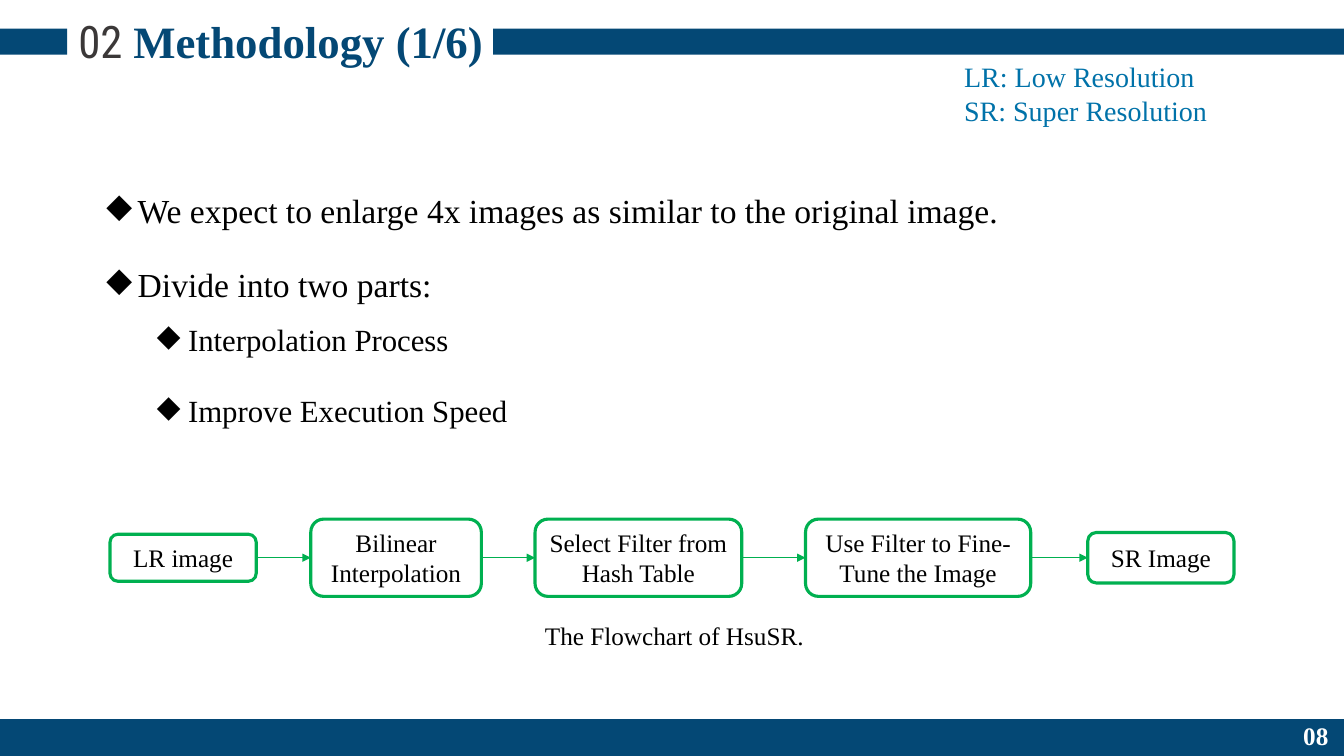
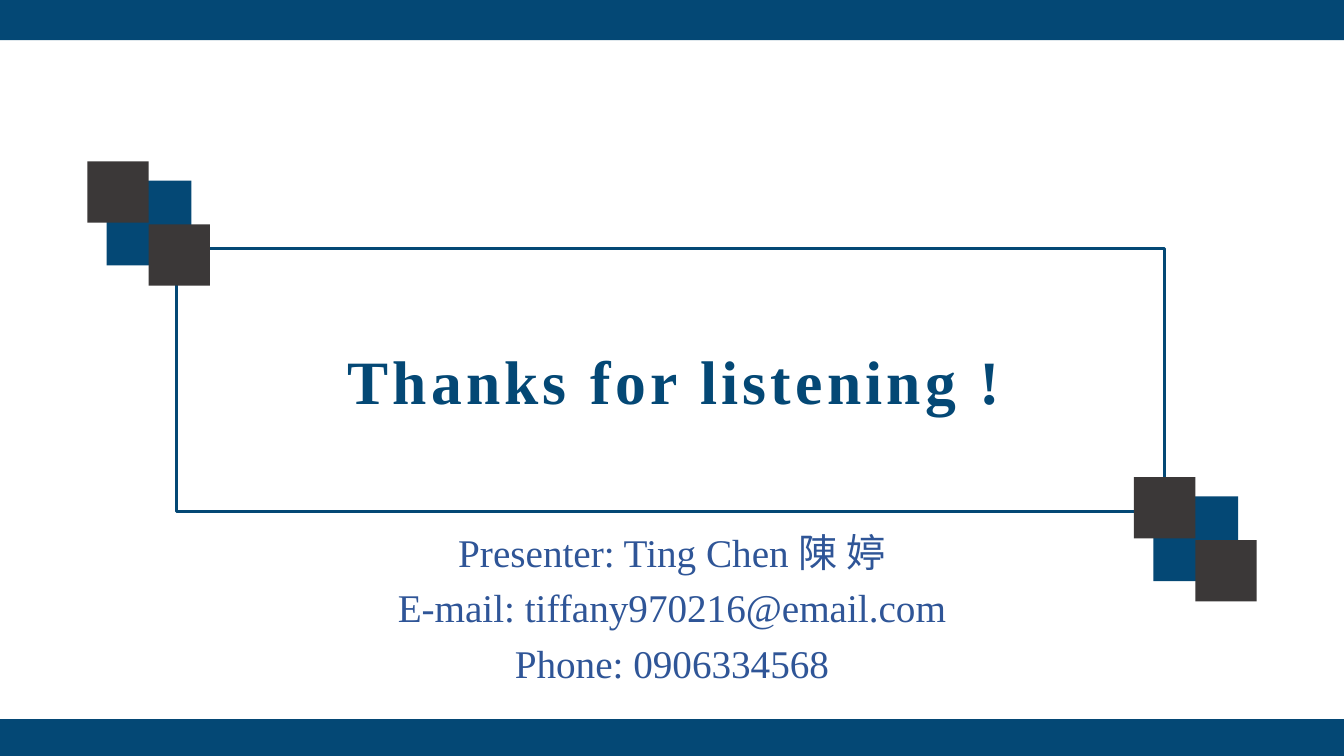
from itertools import pairwise

from lxml.etree import SubElement
from pptx import Presentation
from pptx.dml.color import RGBColor
from pptx.enum.shapes import MSO_CONNECTOR as Connector, MSO_SHAPE as Shape
from pptx.enum.text import MSO_ANCHOR as Anchor, PP_ALIGN as Align
from pptx.oxml.ns import qn
from pptx.util import Inches, Pt

COLUMNS, ROWS = 160, 90
CELL = Inches(1) / 12
SERIF = "Times New Roman"
COLORS = {
    "navy": "044875",
    "charcoal": "3B3838",
    "sky": "0072A9",
    "contact": "2F5597",
    "green": "00B050",
    "black": "000000",
    "white": "FFFFFF",
}
FOOTER_TOP = 85.6


def color(name):
    return RGBColor.from_string(COLORS[name])


def grid(*cells):
    """Turn columns and rows into slide lengths."""
    return [round(cell * CELL) for cell in cells]


def set_all(target, values):
    for name, value in values.items():
        setattr(target, name, value)


def write(para, text, size, ink="black", face=SERIF, bold=False, spacing=None):
    span = para.add_run()
    span.text = text
    set_all(span.font, {"size": Pt(size), "name": face, "bold": bold})
    span.font.color.rgb = color(ink)
    if spacing:
        span.font._element.set("spc", str(spacing * 100))


def fill_frame(frame, lines, size, layout=None, **style):
    frame.word_wrap = True
    for number, line in enumerate(lines):
        para = frame.add_paragraph() if number else frame.paragraphs[0]
        set_all(para, layout or {})
        if number == 0:
            para.space_before = Pt(0)
        write(para, line, size, **style)


def add_text(page, place, lines, size, layout=None, anchor=Anchor.TOP, **style):
    frame = page.shapes.add_textbox(*grid(*place)).text_frame
    frame.vertical_anchor = anchor
    fill_frame(frame, lines, size, layout, **style)


def add_box(page, place, fill=None, line=None, width=1, kind=Shape.RECTANGLE):
    box = page.shapes.add_shape(kind, *grid(*place))
    box.shadow.inherit = False
    if fill:
        box.fill.solid()
        box.fill.fore_color.rgb = color(fill)
    else:
        box.fill.background()
    if line:
        box.line.color.rgb = color(line)
        box.line.width = Pt(width)
    else:
        box.line.fill.background()
    return box


def add_arrow(page, start, end, row):
    x1, y, x2 = grid(start, row, end)
    arrow = page.shapes.add_connector(Connector.STRAIGHT, x1, y, x2, y)
    arrow.line.color.rgb = color("green")
    arrow.line.width = Pt(0.5)
    SubElement(arrow.line._get_or_add_ln(), qn("a:tailEnd"), type="triangle")
    SubElement(arrow._element.spPr, qn("a:effectLst"))


def add_bullet(para, indent):
    properties = para._p.get_or_add_pPr()
    properties.set("marL", str(Inches(indent)))
    properties.set("indent", str(-Inches(0.31)))
    tint = SubElement(properties, qn("a:buClr"))
    SubElement(tint, qn("a:srgbClr"), val=COLORS["black"])
    SubElement(properties, qn("a:buChar"), char="◆")


def add_list(page, place, items):
    """Items are (level, text, points after)."""
    levels = {1: (0.81, 24), 2: (1.31, 22)}
    frame = page.shapes.add_textbox(*grid(*place)).text_frame
    frame.word_wrap = True
    for number, (level, text, after) in enumerate(items):
        para = frame.add_paragraph() if number else frame.paragraphs[0]
        indent, size = levels[level]
        add_bullet(para, indent)
        set_all(para, {"alignment": Align.JUSTIFY, "space_after": Pt(after)})
        write(para, text, size)


def add_flow(page, center, steps):
    """Steps are (text, left, width, height), joined by arrows."""
    for text, left, width, height in steps:
        box = add_box(page, (left, center - height / 2, width, height),
                      "white", "green", 2.25, Shape.ROUNDED_RECTANGLE)
        fill_frame(box.text_frame, [text], 18, {"alignment": Align.CENTER})
    for (_, left, width, _), (_, following, _, _) in pairwise(steps):
        add_arrow(page, left + width, following, center)


def add_footer(page, number=None):
    add_box(page, (0, FOOTER_TOP, COLUMNS, ROWS - FOOTER_TOP), "navy")
    if number:
        add_text(page, (153.3, 85.2, 6.7, 4.8), [number], 18,
                 {"alignment": Align.CENTER}, Anchor.MIDDLE,
                 ink="white", bold=True)


def add_header(page, section, title):
    """A band broken by the section number and the title."""
    for left, right in ((0, 8), (58.7, COLUMNS)):
        add_box(page, (left, 3.4, right - left, 3.1), "navy")
    centered = {"alignment": Align.CENTER}
    add_text(page, (10.1, 1.1, 53.2, 7.7), [title], 32, centered,
             ink="navy", bold=True)
    add_text(page, (7.2, 1.1, 9.5, 7.7), [section], 32, centered,
             ink="charcoal", face="Roboto Condensed")


def add_corner(page, left, top):
    """A navy square with a dark square on two opposite corners."""
    for across, down, side, fill in ((2.3, 2.3, 10.1, "navy"),
                                     (0, 0, 7.3, "charcoal"),
                                     (7.3, 7.5, 7.3, "charcoal")):
        add_box(page, (left + across, top + down, side, side), fill)


def build_methodology(page):
    add_header(page, "02", "Methodology (1/6)")
    add_footer(page, "08")
    add_list(page, (5.5, 22, 147.8, 29.9), [
        (1, "We expect to enlarge 4x images as similar to the original image.", 24),
        (1, "Divide into two parts:", 12),
        (2, "Interpolation Process", 24),
        (2, "Improve Execution Speed", 24),
    ])
    add_text(page, (113.6, 6.5, 46.3, 9.2),
             ["LR: Low Resolution", "SR: Super Resolution"], 20, ink="sky")
    add_flow(page, 66.4, [
        ("LR image", 13.1, 17.4, 5.6),
        ("Bilinear Interpolation", 37, 20.3, 9.2),
        ("Select Filter from Hash Table", 63.7, 24.6, 9.2),
        ("Use Filter to Fine-Tune the Image", 95.9, 26.8, 9.2),
        ("SR Image", 129.5, 17.4, 6),
    ])
    add_text(page, (63.7, 73.2, 33.5, 4.8), ["The Flowchart of HsuSR."], 18)


def build_closing(page):
    centered = {"alignment": Align.CENTER}
    add_text(page, (21.5, 40.2, 117.6, 10.1), ["Thanks for listening !"], 44,
             centered, ink="navy", bold=True, spacing=3)
    add_text(page, (21.2, 62.3, 117.6, 20.2),
             ["Presenter: Ting Chen 陳 婷",
              "E-mail: tiffany970216@email.com",
              "Phone: 0906334568"],
             28, {**centered, "space_before": Pt(6)}, ink="contact")
    add_box(page, (21, 29.6, 117.6, 31.3), line="navy", width=2)
    for left, top in ((135, 56.8), (10.4, 19.2)):
        add_corner(page, left, top)
    add_box(page, (0, 0, COLUMNS, 4.8), "navy")
    add_footer(page)


def main():
    deck = Presentation()
    deck.slide_width, deck.slide_height = grid(COLUMNS, ROWS)
    blank = deck.slide_layouts[6]
    for build in (build_methodology, build_closing):
        build(deck.slides.add_slide(blank))
    deck.save("out.pptx")


if __name__ == "__main__":
    main()
